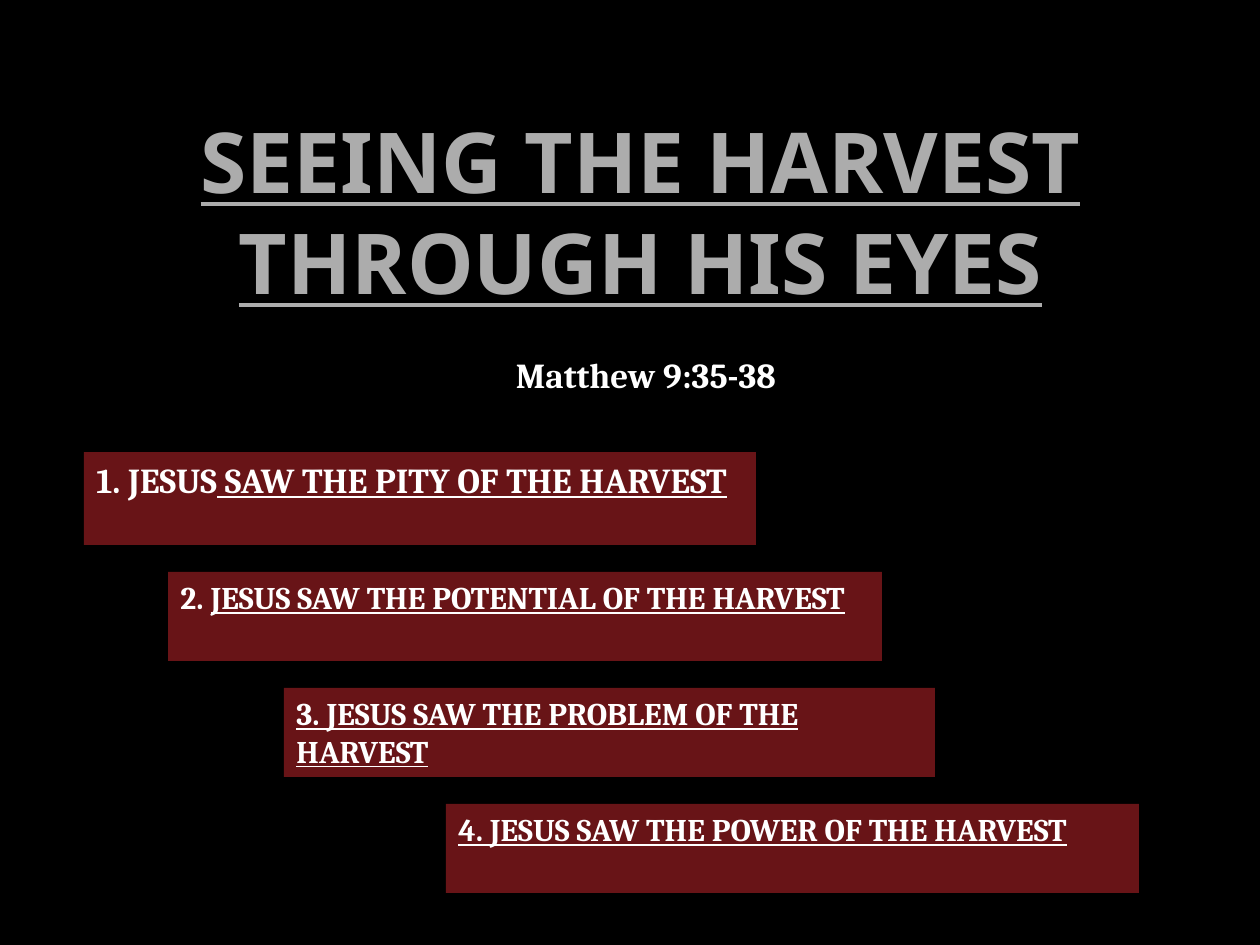
"""Build the sermon outline slide with a title, a passage and four stepped points."""
from pptx import Presentation
from pptx.dml.color import RGBColor
from pptx.enum.shapes import MSO_SHAPE
from pptx.enum.text import MSO_ANCHOR, PP_ALIGN
from pptx.util import Pt

RECT = MSO_SHAPE.RECTANGLE
TOP, BOTTOM = MSO_ANCHOR.TOP, MSO_ANCHOR.BOTTOM
LEFT, CENTER = PP_ALIGN.LEFT, PP_ALIGN.CENTER
PX = 914400 // 126
BLACK, WHITE, GREY, MAROON = "000000", "FFFFFF", "ACACAC", "681417"

TITLE = "SEEING THE HARVEST THROUGH HIS EYES"
PASSAGE = "Matthew 9:35-38"
# left, top, width, height, size, plain text, underlined text
POINTS = [
    (84, 452, 672, 93, 20, "1. JESUS", " SAW THE PITY OF THE HARVEST"),
    (168, 572, 714, 89, 18, "2. ", "JESUS SAW THE POTENTIAL OF THE HARVEST"),
    (284, 688, 651, 89, 18, "", "3. JESUS SAW THE PROBLEM OF THE HARVEST"),
    (446, 804, 693, 89, 18, "", "4. JESUS SAW THE POWER OF THE HARVEST"),
]


def rgb(value):
    """Return the colour of a hex string."""
    return RGBColor.from_string(value)


def box(area):
    """Return an area in px as EMU."""
    return [v * PX for v in area]


def write(sp, runs, size, align, anchor=TOP, font="Cambria", color=WHITE):
    """Fill a shape with bold runs, each a text and an underline flag."""
    tf = sp.text_frame
    tf.word_wrap = True
    tf.vertical_anchor = anchor
    p = tf.paragraphs[0]
    p.alignment = align
    for text, underline in runs:
        if text:
            r = p.add_run()
            r.text = text
            r.font.name, r.font.size = font, Pt(size)
            r.font.bold, r.font.underline = True, underline
            r.font.color.rgb = rgb(color)
    return tf


prs = Presentation()
prs.slide_width, prs.slide_height = 1260 * PX, 945 * PX
s = prs.slides.add_slide(prs.slide_layouts[6])
s.background.fill.solid()
s.background.fill.fore_color.rgb = rgb(BLACK)

title = s.shapes.add_textbox(*box((105, 53, 1071, 359)))
tf = write(title, [(TITLE, True)], 48, CENTER, BOTTOM, "Noto Sans", GREY)
tf.margin_left = tf.margin_right = 6 * PX
tf.margin_top, tf.margin_bottom = 0, 101 * PX

passage = s.shapes.add_textbox(*box((441, 347, 410, 93)))
write(passage, [(PASSAGE, False)], 20, CENTER)

for *area, size, plain, underlined in POINTS:
    sp = s.shapes.add_shape(RECT, *box(area))
    sp.shadow.inherit = False
    sp.fill.solid()
    sp.fill.fore_color.rgb = rgb(MAROON)
    sp.line.fill.background()
    write(sp, [(plain, False), (underlined, True)], size, LEFT)

prs.save("out.pptx")
